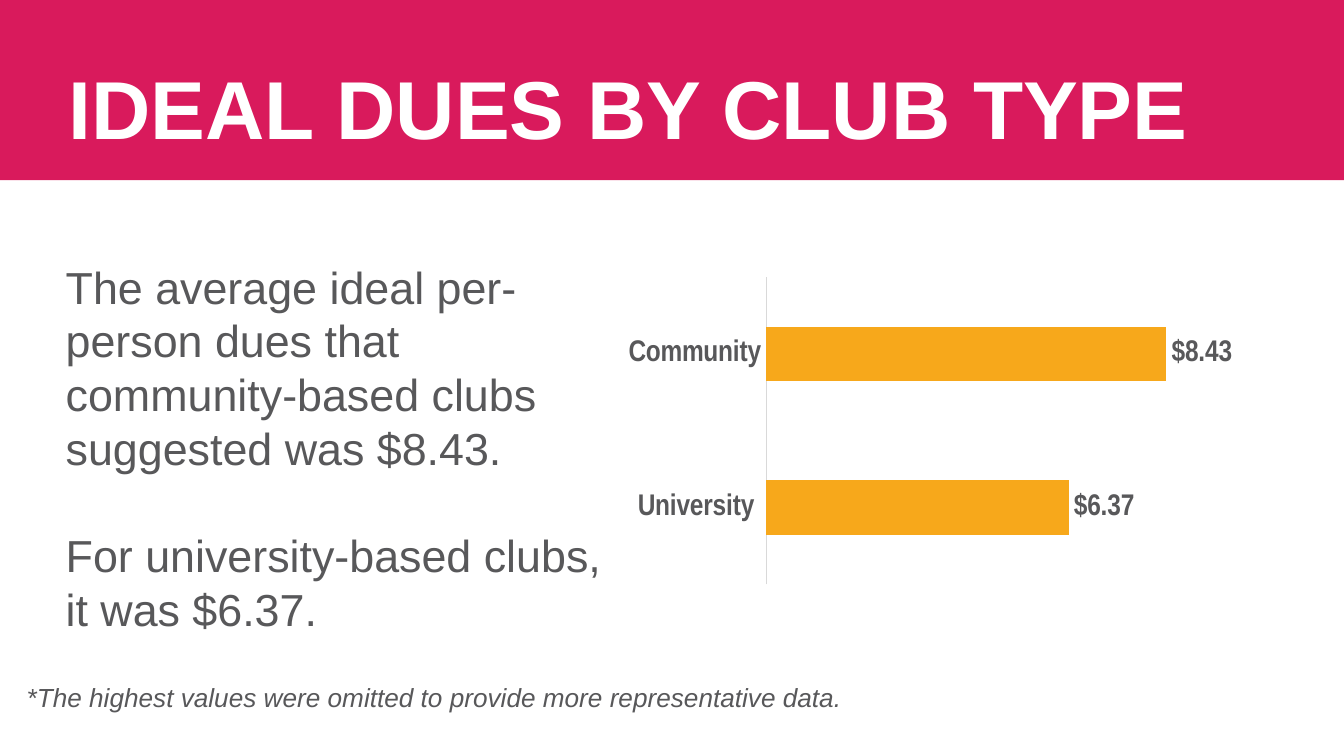
import pptx
import pptx.chart.data
import pptx.dml.color
import pptx.enum.chart
import pptx.enum.shapes
import pptx.enum.text
import pptx.util
from lxml import etree

PINK = pptx.dml.color.RGBColor(0xD9, 0x1A, 0x5C)
ORANGE = pptx.dml.color.RGBColor(0xF7, 0xA8, 0x1B)
GRAY = pptx.dml.color.RGBColor(0x58, 0x58, 0x5A)
AXIS_GRAY = pptx.dml.color.RGBColor(0xD9, 0xD9, 0xD9)
WHITE = pptx.dml.color.RGBColor(0xFF, 0xFF, 0xFF)

# A 16:9 slide, in inches
SLIDE_WIDTH = 10
SLIDE_HEIGHT = SLIDE_WIDTH * 9 / 16
DOLLARS = '"$"#,##0.00'
CHART_NAMESPACE = "http://schemas.openxmlformats.org/drawingml/2006/chart"


def to_inches(box):
    return [pptx.util.Inches(length) for length in box]


def style_font(font, size, color, name="Arial", bold=False, italic=False):
    font.name = name
    font.size = pptx.util.Pt(size)
    font.color.rgb = color
    font.bold = bold
    font.italic = italic


def add_text(slide, box, texts, size, color, leading=None, **style):
    """Place paragraphs in a box; with leading, a blank line's height parts them."""
    text_box = slide.shapes.add_textbox(*to_inches(box))
    frame = text_box.text_frame
    frame.word_wrap = True
    frame.vertical_anchor = pptx.enum.text.MSO_ANCHOR.TOP
    for index, text in enumerate(texts):
        paragraph = frame.paragraphs[0] if index == 0 else frame.add_paragraph()
        if leading:
            paragraph.line_spacing = pptx.util.Pt(leading)
            if index:
                paragraph.space_before = pptx.util.Pt(leading)
        run = paragraph.add_run()
        run.text = text
        style_font(run.font, size, color, **style)


def add_header(slide, box, title):
    left, top, width, height = box
    band = slide.shapes.add_shape(
        pptx.enum.shapes.MSO_SHAPE.RECTANGLE, *to_inches(box))
    band.shadow.inherit = False
    band.fill.solid()
    band.fill.fore_color.rgb = PINK
    band.line.fill.background()
    title_box = (left + 0.0415 * width, top + 0.29 * height,
                 0.87 * width, 0.62 * height)
    add_text(slide, title_box, [title], 44, WHITE, bold=True)


def set_plot_layout(chart, shares):
    """Fix the inner plot area as shares of the chart's box."""
    plot_area = chart.plots[0]._element.getparent()
    for old in plot_area.findall(f"{{{CHART_NAMESPACE}}}layout"):
        plot_area.remove(old)
    layout = etree.Element(f"{{{CHART_NAMESPACE}}}layout")
    manual = etree.SubElement(layout, f"{{{CHART_NAMESPACE}}}manualLayout")
    settings = [("layoutTarget", "inner"), ("xMode", "edge"), ("yMode", "edge")]
    settings += zip("xywh", map(str, shares))
    for tag, value in settings:
        etree.SubElement(manual, f"{{{CHART_NAMESPACE}}}{tag}", val=value)
    plot_area.insert(0, layout)


def add_dues_chart(slide, box):
    data = pptx.chart.data.CategoryChartData(number_format=DOLLARS)
    data.categories = ["Community", "University "]
    data.add_series("Series 1", [8.43, 6.37])
    chart = slide.shapes.add_chart(
        pptx.enum.chart.XL_CHART_TYPE.BAR_CLUSTERED,
        *to_inches(box), data).chart
    chart.has_legend = False
    chart.has_title = False
    style_font(chart.font, 16, GRAY, "Arial Narrow", bold=True)
    set_plot_layout(chart, (0.234, 0.141, 0.697, 0.614))

    # Axes
    no_tick = pptx.enum.chart.XL_TICK_MARK.NONE
    category_axis = chart.category_axis
    category_axis.reverse_order = True
    category_axis.major_tick_mark = no_tick
    category_axis.minor_tick_mark = no_tick
    category_axis.format.line.color.rgb = AXIS_GRAY
    category_axis.format.line.width = pptx.util.Pt(0.75)
    style_font(category_axis.tick_labels.font, 16, GRAY, "Arial Narrow", bold=True)
    value_axis = chart.value_axis
    value_axis.minimum_scale = 0
    value_axis.maximum_scale = 12
    value_axis.has_major_gridlines = False
    value_axis.tick_labels.number_format = DOLLARS
    value_axis.tick_labels.number_format_is_linked = False
    value_axis.visible = False

    # Bars and their labels
    plot = chart.plots[0]
    plot.gap_width = 182
    plot.vary_by_categories = False
    series = plot.series[0]
    series.format.fill.solid()
    series.format.fill.fore_color.rgb = ORANGE
    labels = series.data_labels
    labels.show_value = True
    labels.position = pptx.enum.chart.XL_LABEL_POSITION.OUTSIDE_END
    labels.number_format = DOLLARS
    labels.number_format_is_linked = False
    style_font(labels.font, 16, GRAY, "Arial Narrow", bold=True)


def main():
    presentation = pptx.Presentation()
    presentation.slide_width = pptx.util.Inches(SLIDE_WIDTH)
    presentation.slide_height = pptx.util.Inches(SLIDE_HEIGHT)
    slide = presentation.slides.add_slide(presentation.slide_layouts[6])

    # Title band
    add_header(slide, (0, -0.01, SLIDE_WIDTH, 1.35), "IDEAL DUES BY CLUB TYPE")
    # Footnote
    add_text(slide, (0.1, 5.02, 8.86, 0.34),
             ["*The highest values were omitted to provide more "
              "representative data."], 14, GRAY, italic=True)
    # Chart on the right
    add_dues_chart(slide, (4.28, 1.54, 6.08, 3.72))
    # Findings on the left
    add_text(slide, (0.39, 1.88, 4.39, 2.9),
             ["The average ideal per-person dues that community-based clubs "
              "suggested was $8.43.",
              "For university-based clubs, it was $6.37."],
             24, GRAY, leading=28.8)

    presentation.save("out.pptx")


if __name__ == "__main__":
    main()
